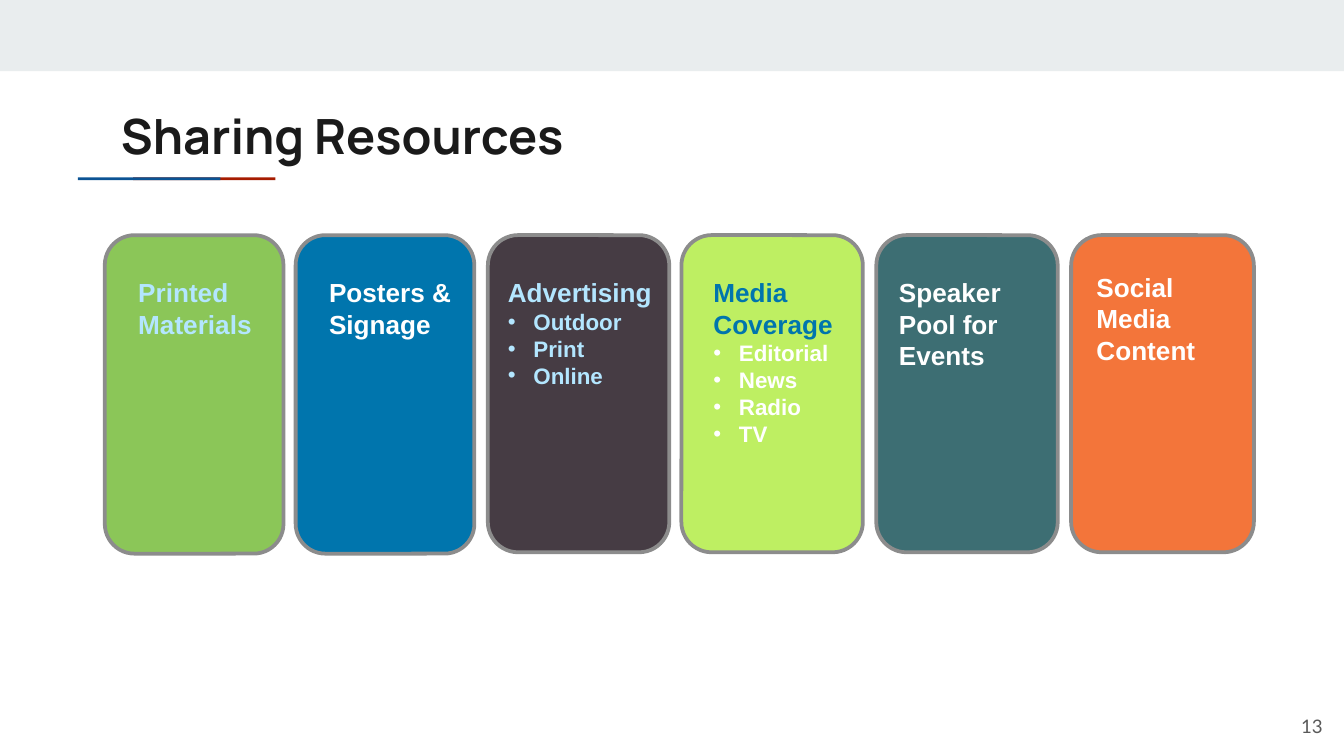
import pptx
import pptx.util
import pptx.dml.color
import pptx.enum.shapes
import pptx.enum.text
import pptx.oxml.ns
import lxml.etree
from dataclasses import dataclass

Inches = pptx.util.Inches
Pt = pptx.util.Pt
Align = pptx.enum.text.PP_ALIGN
Anchor = pptx.enum.text.MSO_ANCHOR
Preset = pptx.enum.shapes.MSO_SHAPE


@dataclass(frozen=True)
class Theme:
    band: str = "E9EDEE"
    red: str = "A61C00"
    navy: str = "0B5394"
    ink: str = "1A1A1A"
    grey: str = "595959"
    outline: str = "8C8C8C"
    white: str = "FFFFFF"
    sky: str = "B3E6FF"
    blue: str = "0075AD"
    green: str = "8BC658"
    plum: str = "463C44"
    lime: str = "BEEF62"
    teal: str = "3D6E73"
    orange: str = "F3753A"
    title_font: str = "Manrope"
    body_font: str = "Arial"
    number_font: str = "Lato"
    title_size: int = 26
    heading_size: int = 14
    bullet_size: int = 12
    number_size: int = 10


class SlideBuilder:
    def __init__(self, slide, theme):
        self.slide = slide
        self.theme = theme

    def style(self, paragraph, font, size, color, bold=True):
        for run in paragraph.runs:
            run.font.name = font
            run.font.size = Pt(size)
            run.font.bold = bold
            run.font.color.rgb = pptx.dml.color.RGBColor.from_string(color)

    def frame(self, text_frame, inset_y, anchor=Anchor.TOP):
        text_frame.word_wrap = True
        text_frame.auto_size = pptx.enum.text.MSO_AUTO_SIZE.NONE
        text_frame.vertical_anchor = anchor
        text_frame.margin_left = text_frame.margin_right = Inches(0.1)
        text_frame.margin_top = text_frame.margin_bottom = Inches(inset_y)

    def textbox(self, left, top, width, height, inset_y=0.05, anchor=Anchor.TOP):
        box = self.slide.shapes.add_textbox(
            Inches(left), Inches(top), Inches(width), Inches(height))
        self.frame(box.text_frame, inset_y, anchor)
        return box.text_frame

    def shape(self, preset, left, top, width, height, fill, outline=None):
        shape = self.slide.shapes.add_shape(
            preset, Inches(left), Inches(top), Inches(width), Inches(height))
        shape.shadow.inherit = False
        shape.fill.solid()
        shape.fill.fore_color.rgb = pptx.dml.color.RGBColor.from_string(fill)
        if outline:
            shape.line.color.rgb = pptx.dml.color.RGBColor.from_string(outline)
            shape.line.width = Pt(2)
        else:
            shape.line.fill.background()

    def title(self, text, left, top, width, height):
        title = self.slide.shapes.title
        title.left, title.top = Inches(left), Inches(top)
        title.width, title.height = Inches(width), Inches(height)
        self.frame(title.text_frame, 0.1)
        title.text_frame.text = text
        heading = title.text_frame.paragraphs[0]
        heading.alignment = Align.LEFT
        self.style(heading, self.theme.title_font, self.theme.title_size, self.theme.ink)

    def page_number(self, text, left, top, width, height):
        text_frame = self.textbox(left, top, width, height, 0.1, Anchor.MIDDLE)
        text_frame.text = text
        number = text_frame.paragraphs[0]
        number.alignment = Align.RIGHT
        self.style(number, self.theme.number_font, self.theme.number_size,
                   self.theme.grey, bold=False)

    def bullet(self, paragraph, color):
        qn = pptx.oxml.ns.qn
        properties = paragraph._p.get_or_add_pPr()
        properties.set("marL", str(Inches(0.19)))
        properties.set("indent", str(-Inches(0.19)))
        bullet_color = lxml.etree.SubElement(properties, qn("a:buClr"))
        lxml.etree.SubElement(bullet_color, qn("a:srgbClr"), val=color)
        lxml.etree.SubElement(properties, qn("a:buFont"), typeface=self.theme.body_font)
        lxml.etree.SubElement(properties, qn("a:buChar"), char="•")

    def label(self, place, heading, heading_color, items=(), item_color=None):
        text_frame = self.textbox(*place)
        text_frame.text = heading
        for line in text_frame.paragraphs:
            self.style(line, self.theme.body_font, self.theme.heading_size, heading_color)
        for item in items:
            entry = text_frame.add_paragraph()
            entry.text = item
            self.bullet(entry, item_color)
            self.style(entry, self.theme.body_font, self.theme.bullet_size, item_color)


def main():
    theme = Theme()
    deck = pptx.Presentation()
    deck.slide_width = Inches(10)
    deck.slide_height = Inches(10 * 9 / 16)
    builder = SlideBuilder(deck.slides.add_slide(deck.slide_layouts[5]), theme)

    # Top band and two-colour rule under the title
    builder.shape(Preset.RECTANGLE, 0, 0, 10, 0.53, theme.band)
    for left, color in ((0.99, theme.red), (0.58, theme.navy)):
        builder.shape(Preset.RECTANGLE, left, 1.32, 1.06, 0.02, color)

    # Title and page number
    builder.title("Sharing Resources", 0.8, 0.69, 8.41, 0.59)
    builder.page_number("13", 9.34, 5.19, 0.6, 0.43)

    # Cards: left, width, height, fill, then label place, heading, colour, bullets, colour
    resources = (
        (0.78, 1.33, 2.37, theme.green, (0.93, 2.01, 1.17, 0.57),
         "Printed Materials", theme.sky),
        (2.2, 1.33, 2.37, theme.blue, (2.35, 2.01, 1.17, 0.57),
         "Posters & Signage", theme.white),
        (3.63, 1.35, 2.36, theme.plum, (3.68, 2.01, 1.29, 0.94),
         "Advertising", theme.sky, ("Outdoor", "Print", "Online"), theme.sky),
        (5.07, 1.35, 2.36, theme.lime, (5.21, 2.01, 1.17, 1.38),
         "Media Coverage", theme.blue, ("Editorial", "News", "Radio", "TV"), theme.white),
        (6.52, 1.35, 2.36, theme.teal, (6.59, 2.01, 1.17, 0.81),
         "Speaker Pool for Events", theme.white),
        (7.97, 1.36, 2.36, theme.orange, (8.06, 1.97, 1.17, 0.81),
         "Social\nMedia\nContent", theme.white),
    )
    for left, width, height, fill, *label in resources:
        builder.shape(Preset.ROUNDED_RECTANGLE, left, 1.75, width, height,
                      fill, theme.outline)
        builder.label(*label)

    deck.save("out.pptx")


if __name__ == "__main__":
    main()
